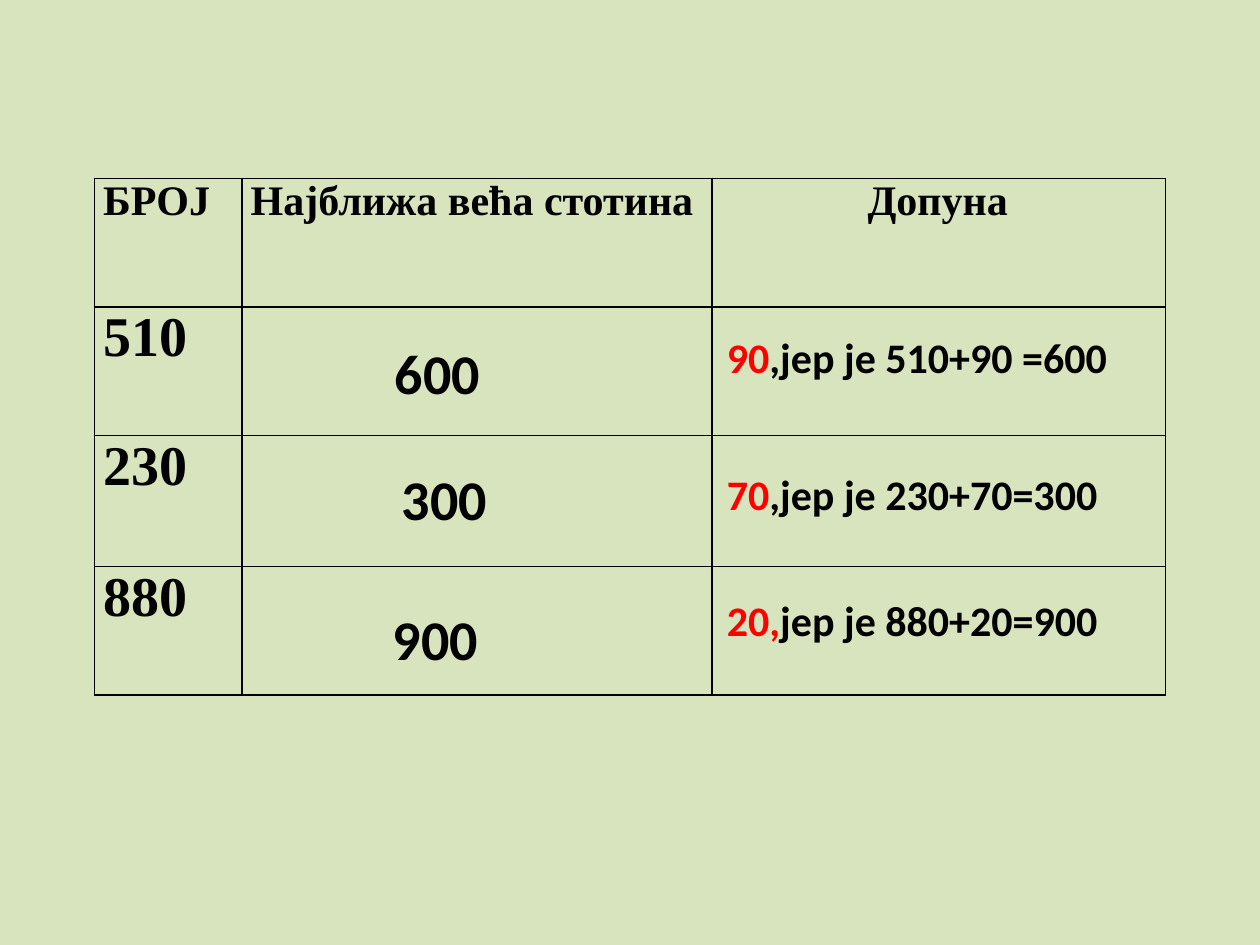
from dataclasses import dataclass

from lxml import etree
from pptx import Presentation
from pptx.dml.color import RGBColor
from pptx.enum import text
from pptx.oxml import ns
from pptx.util import Pt


@dataclass(frozen=True)
class Theme:
    background: str = "D7E4BD"
    ink: str = "000000"
    accent: str = "FF0000"
    table_font: str = "Times New Roman"
    answer_font: str = "Calibri"
    normal: int = 24
    large: int = 32
    border: int = 1


THEME = Theme()
COLUMNS = (84.24, 268.56, 259.2)
ROWS = (73.44, 73.44, 74.88, 73.44)
HEADERS = (("БРОЈ", 0), ("Најближа већа стотина", 0), ("Допуна", 84))
NUMBERS = ("510", "230", "880")

# Box (left, top, width, height), indent, top inset, number
HUNDREDS = (
    ((185.76, 185.76, 185.76, 51), 32.7, 7.4, "600"),
    ((198, 257.76, 162, 51), 24.5, 7.4, "300"),
    ((174.24, 342, 149.76, 46), 43.2, 3.6, "900"),
)
# Box, red part, black part
COMPLEMENTS = (
    ((408.24, 185.76, 293.76, 36.72), "90", ",јер је 510+90 =600"),
    ((408.24, 264.24, 264.24, 36.72), "70", ",јер је 230+70=300"),
    ((408.24, 336.24, 252, 36.72), "20,", "јер је 880+20=900"),
)


def add_run(paragraph, words, font, size, color):
    run = paragraph.add_run()
    run.text = words
    run.font.name = font
    run.font.size = Pt(size)
    run.font.bold = True
    run.font.color.rgb = RGBColor.from_string(color)


def indent(paragraph, points):
    properties = paragraph._p.get_or_add_pPr()
    properties.set("marL", str(Pt(points)))
    properties.set("indent", "0")


def outline_cell(cell):
    properties = cell._tc.get_or_add_tcPr()
    for side in ("a:lnL", "a:lnR", "a:lnT", "a:lnB"):
        line = etree.SubElement(properties, ns.qn(side), w=str(Pt(THEME.border)))
        fill = etree.SubElement(line, ns.qn("a:solidFill"))
        etree.SubElement(fill, ns.qn("a:srgbClr"), val=THEME.ink)
    cell.fill.background()


def add_number_table(slide, left, top):
    frame = slide.shapes.add_table(len(ROWS), len(COLUMNS), Pt(left), Pt(top),
                                   Pt(sum(COLUMNS)), Pt(sum(ROWS)))
    table = frame.table
    table.first_row = table.horz_banding = False
    for column, width in zip(table.columns, COLUMNS):
        column.width = Pt(width)
    for row, height in zip(table.rows, ROWS):
        row.height = Pt(height)
    for cell in table.iter_cells():
        cell.margin_left = cell.margin_right = Pt(5)
        cell.margin_top = cell.margin_bottom = 0
        outline_cell(cell)
    for column, (words, offset) in enumerate(HEADERS):
        paragraph = table.cell(0, column).text_frame.paragraphs[0]
        if offset:
            indent(paragraph, offset)
        add_run(paragraph, words, THEME.table_font, THEME.normal, THEME.ink)
    for row, number in enumerate(NUMBERS, start=1):
        paragraph = table.cell(row, 0).text_frame.paragraphs[0]
        add_run(paragraph, number, THEME.table_font, THEME.large, THEME.ink)


def add_answer_box(slide, box, top_inset=3.6):
    """Adds an empty text box and returns its paragraph."""
    frame = slide.shapes.add_textbox(*map(Pt, box)).text_frame
    frame.word_wrap = True
    frame.auto_size = text.MSO_AUTO_SIZE.SHAPE_TO_FIT_TEXT
    frame.margin_top = Pt(top_inset)
    return frame.paragraphs[0]


def add_hundred(slide, box, offset, top_inset, number):
    paragraph = add_answer_box(slide, box, top_inset)
    indent(paragraph, offset)
    add_run(paragraph, number, THEME.answer_font, THEME.large, THEME.ink)


def add_complement(slide, box, answer, reason):
    paragraph = add_answer_box(slide, box)
    add_run(paragraph, answer, THEME.answer_font, THEME.normal, THEME.accent)
    add_run(paragraph, reason, THEME.answer_font, THEME.normal, THEME.ink)


def main():
    presentation = Presentation()
    presentation.slide_width, presentation.slide_height = Pt(720), Pt(540)
    slide = presentation.slides.add_slide(presentation.slide_layouts.get_by_name("Blank"))
    slide.background.fill.solid()
    slide.background.fill.fore_color.rgb = RGBColor.from_string(THEME.background)
    add_number_table(slide, 54, 102)
    for hundred, complement in zip(HUNDREDS, COMPLEMENTS):
        add_hundred(slide, *hundred)
        add_complement(slide, *complement)
    presentation.save("out.pptx")


if __name__ == "__main__":
    main()
